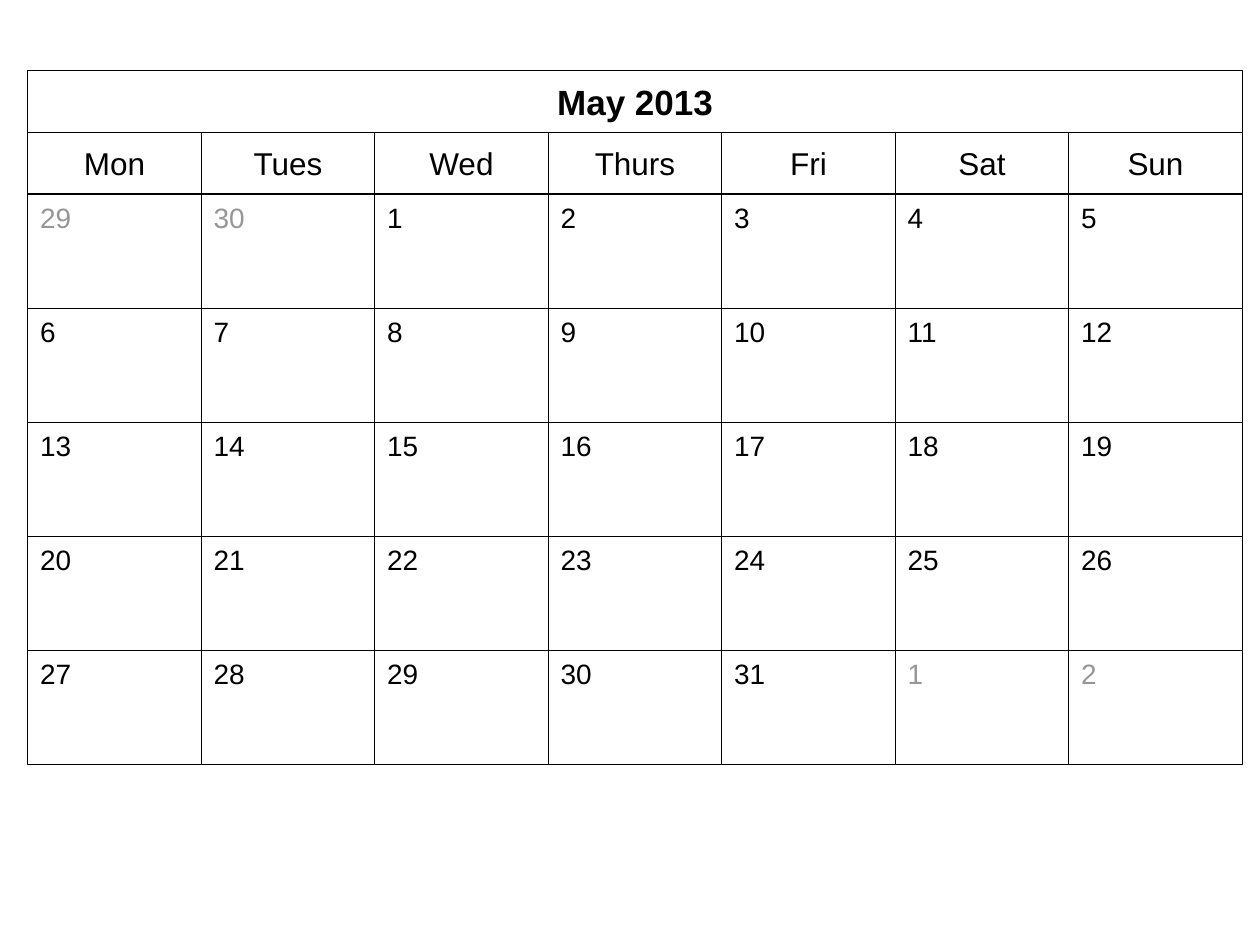
from dataclasses import dataclass

import pptx
import pptx.dml.color
import pptx.enum.shapes
import pptx.enum.text
import pptx.util

ALIGN = pptx.enum.text.PP_ALIGN
ANCHOR = pptx.enum.text.MSO_ANCHOR


@dataclass(frozen=True)
class Theme:
    font: str = "Arial"
    ink: str = "000000"
    muted: str = "969696"
    paper: str = "FFFFFF"
    title_size: int = 20
    weekday_size: int = 18
    day_size: int = 16
    line_width: float = 0.75


class Calendar:
    """Draws a month on a grid of seven columns, in inches."""
    left, top, width, height = 0.22, 0.56, 9.64, 5.51
    header_height = 0.49

    def __init__(self, slide, theme, weeks):
        self.slide, self.theme = slide, theme
        self.column_width = self.width / 7
        self.week_top = self.top + 2 * self.header_height
        self.week_height = (self.height - 2 * self.header_height) / weeks

    def color(self, value):
        return pptx.dml.color.RGBColor.from_string(value)

    def cell(self, column, top, height):
        sp = self.slide.shapes.add_shape(
            pptx.enum.shapes.MSO_SHAPE.RECTANGLE,
            pptx.util.Inches(self.left + column * self.column_width),
            pptx.util.Inches(top),
            pptx.util.Inches(self.column_width),
            pptx.util.Inches(height))
        sp.shadow.inherit = False
        return sp

    def format(self, sp, text, size, color, align, anchor, inset, bold=False):
        sp.line.color.rgb = self.color(self.theme.ink)
        sp.line.width = pptx.util.Pt(self.theme.line_width)
        tf = sp.text_frame
        tf.text = text
        tf.word_wrap = True
        tf.auto_size = pptx.enum.text.MSO_AUTO_SIZE.NONE
        tf.vertical_anchor = anchor
        tf.margin_left = tf.margin_right = pptx.util.Inches(0.1)
        tf.margin_top = tf.margin_bottom = pptx.util.Inches(inset)
        p = tf.paragraphs[0]
        p.alignment = align
        font = p.runs[0].font
        font.name, font.size, font.bold = self.theme.font, pptx.util.Pt(size), bold
        font.color.rgb = self.color(color)

    def header(self, sp, text, size, bold=False):
        sp.fill.solid()
        sp.fill.fore_color.rgb = self.color(self.theme.paper)
        self.format(sp, text, size, self.theme.ink,
                    ALIGN.CENTER, ANCHOR.MIDDLE, 0.02, bold)

    def title(self, text):
        sp = self.slide.shapes.title
        sp.left, sp.top = pptx.util.Inches(self.left), pptx.util.Inches(self.top)
        sp.width = pptx.util.Inches(self.width)
        sp.height = pptx.util.Inches(self.header_height)
        self.header(sp, text, self.theme.title_size, bold=True)

    def weekday(self, column, name):
        sp = self.cell(column, self.top + self.header_height, self.header_height)
        self.header(sp, name, self.theme.weekday_size)

    def day(self, column, week, number, in_month):
        sp = self.cell(column, self.week_top + week * self.week_height,
                       self.week_height)
        sp.fill.background()
        color = self.theme.ink if in_month else self.theme.muted
        self.format(sp, str(number), self.theme.day_size, color,
                    ALIGN.LEFT, ANCHOR.TOP, 0.05)


def main():
    prs = pptx.Presentation()
    prs.slide_width, prs.slide_height = pptx.util.Inches(10), pptx.util.Inches(7.5)
    s = prs.slides.add_slide(prs.slide_layouts.get_by_name("Title Only"))

    # Days of the month, with the ends of its neighbours
    before, month, after = [29, 30], list(range(1, 32)), [1, 2]
    days = before + month + after
    calendar = Calendar(s, Theme(), weeks=len(days) // 7)

    # Month and weekday headings
    calendar.title("May 2013")
    for column, name in enumerate("Mon Tues Wed Thurs Fri Sat Sun".split()):
        calendar.weekday(column, name)

    # Day grid
    for i, number in enumerate(days):
        week, column = divmod(i, 7)
        in_month = len(before) <= i < len(before) + len(month)
        calendar.day(column, week, number, in_month)

    prs.save("out.pptx")


if __name__ == "__main__":
    main()
